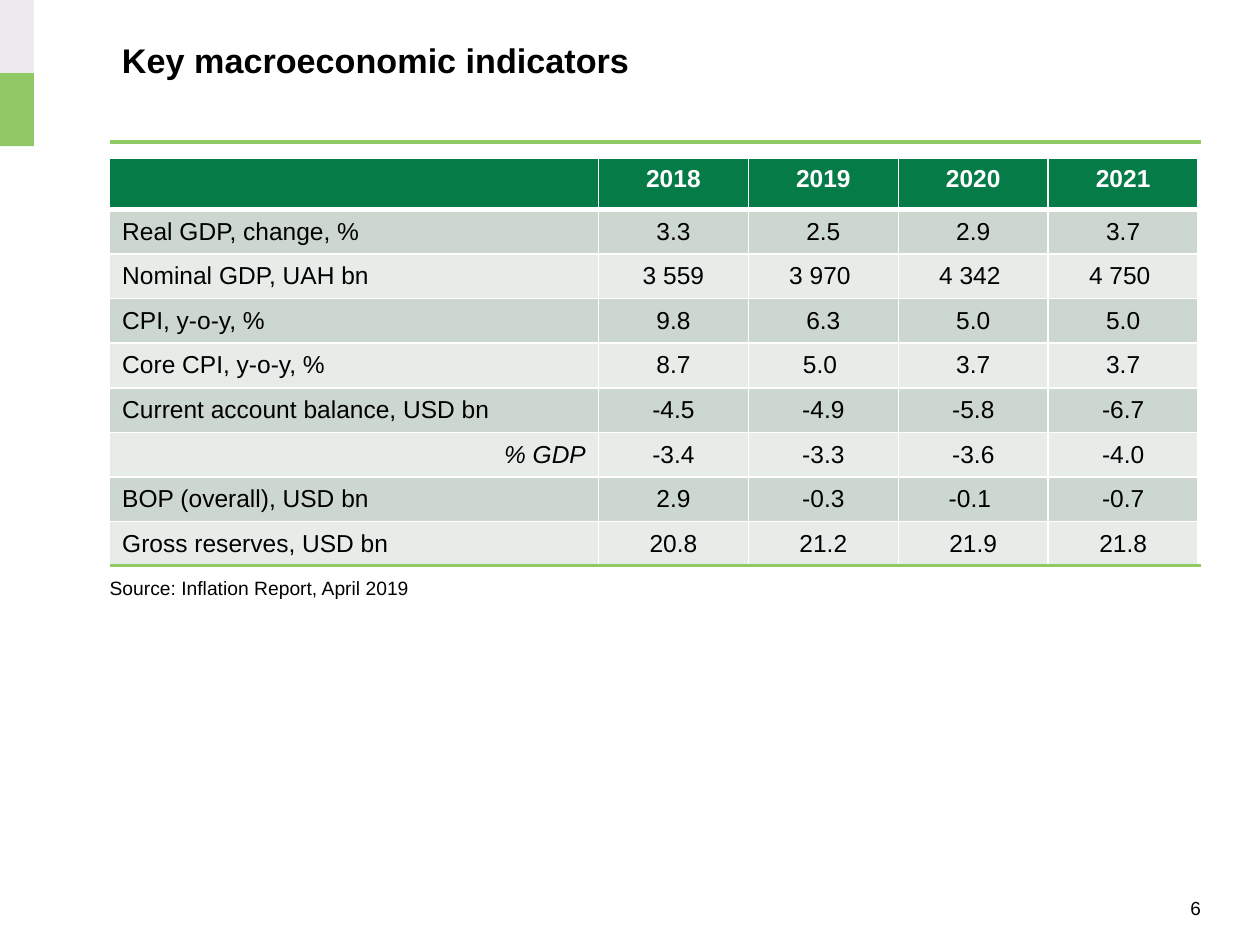
import pptx
import pptx.dml.color
import pptx.enum.shapes
import pptx.enum.text
import pptx.oxml
import pptx.oxml.ns
import pptx.util
from pptx.dml.color import RGBColor
from pptx.util import Inches

BLACK = RGBColor(0x00, 0x00, 0x00)
WHITE = RGBColor(0xFF, 0xFF, 0xFF)
LIME = RGBColor(0x91, 0xCA, 0x64)
PALE_GREY = RGBColor(0xEE, 0xEB, 0xEE)
HEADER_GREEN = RGBColor(0x05, 0x7C, 0x48)
BANDS = (RGBColor(0xCC, 0xD7, 0xCF), RGBColor(0xE7, 0xEC, 0xE9))

LEFT, RIGHT = 0.87, 9.53
WIDTH = RIGHT - LEFT
ALIGN = pptx.enum.text.PP_ALIGN
ANCHOR = pptx.enum.text.MSO_ANCHOR

INDICATORS = [
    ("", "2018", "2019", "2020", "2021"),
    ("Real GDP, change, %", "3.3", "2.5", "2.9", "3.7"),
    ("Nominal GDP, UAH bn", "3 559", "3 970 ", "4 342 ", "4 750 "),
    ("CPI, y-o-y, %", "9.8", "6.3", "5.0", "5.0"),
    ("Core CPI, y-o-y, %", "8.7", "5.0 ", "3.7", "3.7"),
    ("Current account balance, USD bn", "-4.5", "-4.9", "-5.8", "-6.7"),
    ("% GDP", "-3.4", "-3.3", "-3.6", "-4.0"),
    ("BOP (overall), USD bn", "2.9", "-0.3", "-0.1 ", "-0.7"),
    ("Gross reserves, USD bn", "20.8", "21.2", "21.9", "21.8"),
]


class SlideBuilder:
    """Hold the text style and the current page, and add elements to it."""

    font_name = "Arial"

    def __init__(self, page):
        self.page = page

    def add_span(self, para, text, size, color=BLACK, bold=False, italic=False, align=ALIGN.LEFT):
        para.alignment = align
        span = para.add_run()
        span.text = text
        font = span.font
        font.name, font.size = self.font_name, pptx.util.Pt(size)
        font.bold, font.italic = bold, italic
        font.color.rgb = color

    def text(self, left, top, width, height, text, size, inset=(0, 0), anchor=ANCHOR.TOP, **style):
        box = self.page.shapes.add_textbox(Inches(left), Inches(top), Inches(width), Inches(height))
        frame = box.text_frame
        frame.word_wrap = True
        frame.vertical_anchor = anchor
        frame.margin_left = frame.margin_right = Inches(inset[0])
        frame.margin_top = frame.margin_bottom = Inches(inset[1])
        self.add_span(frame.paragraphs[0], text, size, **style)

    def block(self, left, top, width, height, color):
        shape = self.page.shapes.add_shape(
            pptx.enum.shapes.MSO_SHAPE.RECTANGLE,
            Inches(left), Inches(top), Inches(width), Inches(height))
        shape.shadow.inherit = False
        shape.fill.solid()
        shape.fill.fore_color.rgb = color
        shape.line.fill.background()

    def rule(self, top, weight):
        line = self.page.shapes.add_connector(
            pptx.enum.shapes.MSO_CONNECTOR.STRAIGHT,
            Inches(LEFT), Inches(top), Inches(RIGHT), Inches(top))
        line.line.color.rgb = LIME
        line.line.width = pptx.util.Pt(weight)
        properties = line._element.spPr
        properties.append(properties.makeelement(pptx.oxml.ns.qn("a:effectLst"), {}))

    def borders(self, cell, top, bottom):
        properties = cell._tc.get_or_add_tcPr()
        for side, weight in (("L", 1), ("R", 1), ("T", top), ("B", bottom)):
            properties.append(pptx.oxml.parse_xml(
                f'<a:ln{side} {pptx.oxml.ns.nsdecls("a")} w="{pptx.util.Pt(weight)}">'
                f'<a:solidFill><a:srgbClr val="{WHITE}"/></a:solidFill></a:ln{side}>'))

    def table(self, left, top, height, widths, rows):
        frame = self.page.shapes.add_table(
            len(rows), len(widths), Inches(left), Inches(top), Inches(sum(widths)), Inches(height))
        grid = frame.table
        for column, width in zip(grid.columns, widths):
            column.width = Inches(width)
        for row, values in enumerate(rows):
            header = row == 0
            for column, value in enumerate(values):
                cell = grid.cell(row, column)
                self.borders(cell, 3 if row == 1 else 1, 3 if header else 1)
                cell.fill.solid()
                cell.fill.fore_color.rgb = HEADER_GREEN if header else BANDS[(row - 1) % 2]
                cell.vertical_anchor = ANCHOR.TOP if header else ANCHOR.MIDDLE
                share = value == "% GDP"
                align = ALIGN.CENTER if column else ALIGN.RIGHT if share else ALIGN.LEFT
                if value:
                    self.add_span(cell.text_frame.paragraphs[0], value, 14,
                                  WHITE if header else BLACK, header, share, align)


def main():
    deck = pptx.Presentation()
    deck.slide_width, deck.slide_height = Inches(10), Inches(7.5)
    builder = SlideBuilder(deck.slides.add_slide(deck.slide_layouts[6]))
    builder.rule(1.13, 2.25)
    for index, color in enumerate((PALE_GREY, LIME)):
        builder.block(0, index * 0.58, 0.27, 0.58, color)
    builder.text(8.35, 7.05, 1.18, 0.31, "6", 10.8, anchor=ANCHOR.MIDDLE, align=ALIGN.RIGHT)
    builder.text(LEFT, 0.26, WIDTH, 0.79, "Key macroeconomic indicators", 19.5,
                 inset=(0.1, 0.05), bold=True)
    builder.text(LEFT, 4.57, WIDTH, 0.37, "Source: Inflation Report, April 2019", 11)
    builder.table(LEFT, 1.26, 3.19, [3.88] + [1.19] * 4, INDICATORS)
    builder.rule(4.49, 1.5)
    deck.save("out.pptx")


if __name__ == "__main__":
    main()
